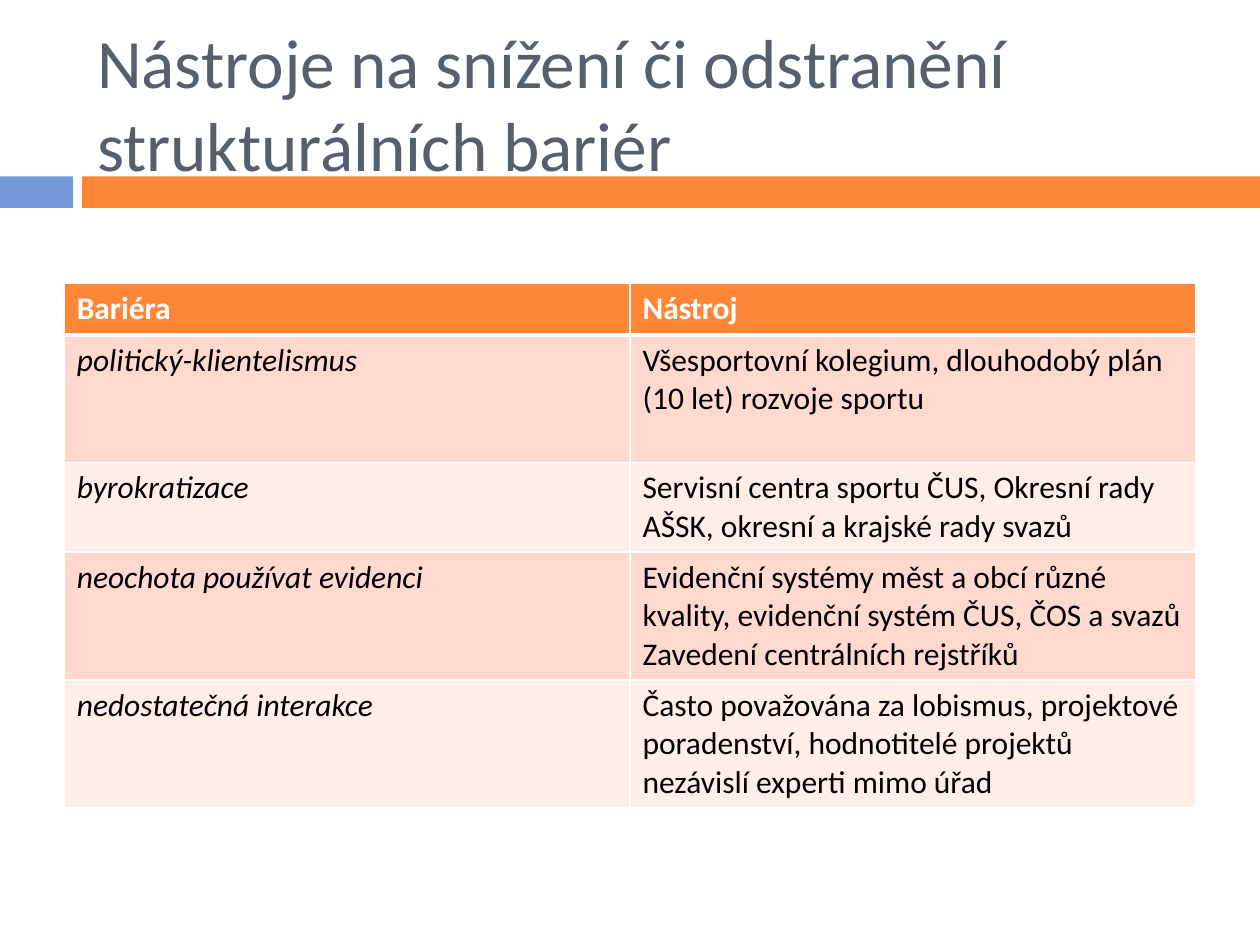
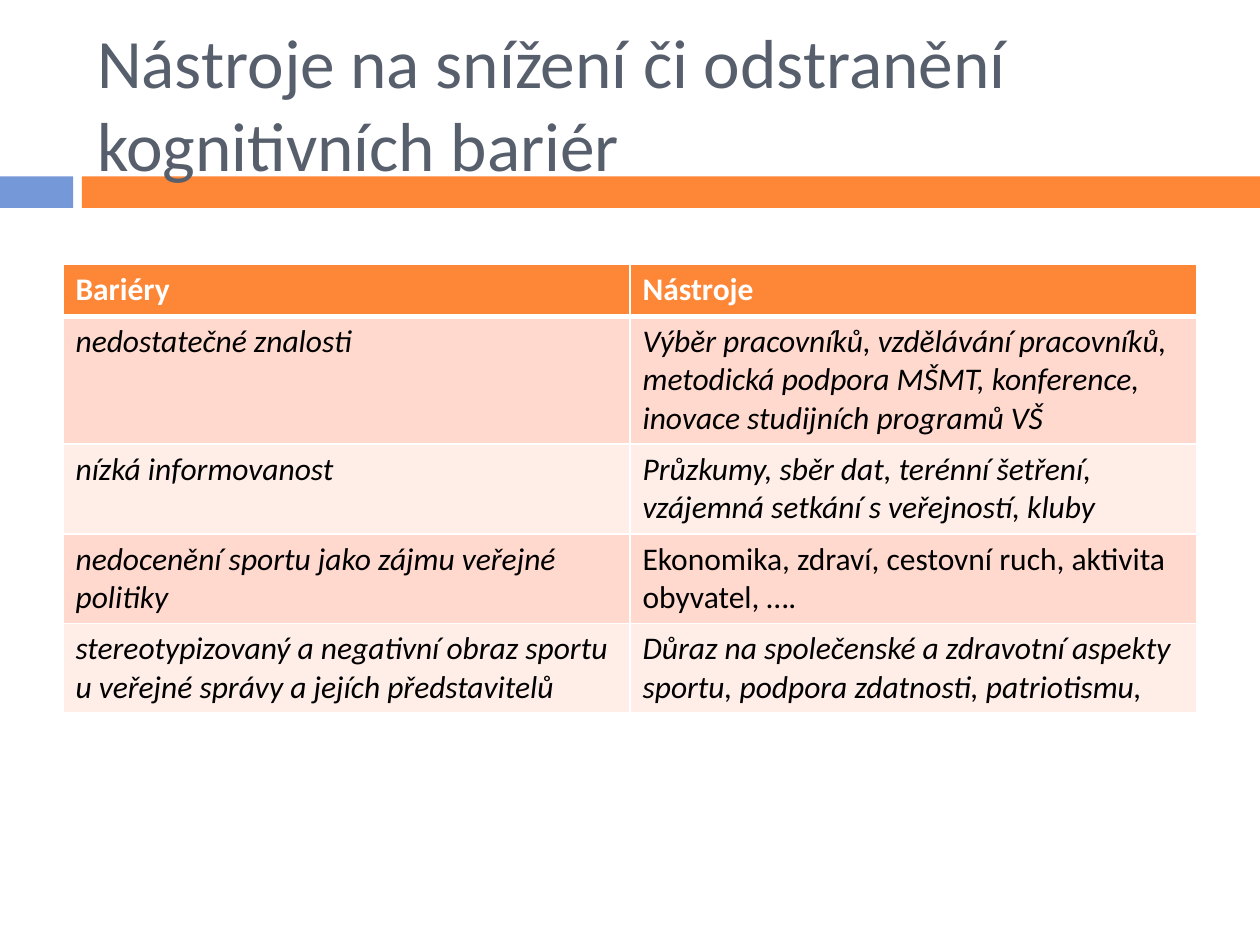
from lxml.etree import SubElement
from pptx import Presentation
from pptx.dml.color import RGBColor
from pptx.enum.shapes import MSO_SHAPE
from pptx.enum.text import MSO_ANCHOR, MSO_AUTO_SIZE, PP_ALIGN
from pptx.oxml.ns import qn
from pptx.util import Inches, Pt

ORANGE, BLUE, SLATE = "FE8637", "7598D9", "575F6D"
WHITE, BLACK = "FFFFFF", "000000"
ROW_TINTS = ["FFD9CE", "FFEDE8"]
FONT = "Calibri"


def paint(fill, hex_color):
    fill.solid()
    fill.fore_color.rgb = RGBColor.from_string(hex_color)


def write(frame, text, size=18, color=BLACK, bold=False, italic=False):
    frame.text = text
    for paragraph in frame.paragraphs:
        paragraph.alignment = PP_ALIGN.LEFT
        for run in paragraph.runs:
            run.font.name = FONT
            run.font.size = Pt(size)
            run.font.bold = bold
            run.font.italic = italic
            paint(run.font.fill, color)


# Content: header, then (barrier, tool, tool in italics, row height)
barrier_slides = [
    {
        "title": "Nástroje na snížení či odstranění strukturálních bariér",
        "left": 0.51, "top": 2.25, "column": 4.49,
        "header": ("Bariéra", "Nástroj"),
        "rows": [
            ("politický-klientelismus",
             "Všesportovní kolegium, dlouhodobý plán (10 let) rozvoje sportu", False, 1.01),
            ("byrokratizace",
             "Servisní centra sportu ČUS, Okresní rady AŠSK, okresní a krajské rady svazů",
             False, 0.71),
            ("neochota používat evidenci",
             "Evidenční systémy měst a obcí různé kvality, evidenční systém ČUS, ČOS a svazů\n"
             "Zavedení centrálních rejstříků", False, 1.01),
            ("nedostatečná interakce",
             "Často považována za lobismus, projektové poradenství, hodnotitelé projektů "
             "nezávislí experti mimo úřad", False, 1.01),
        ],
    },
    {
        "title": "Nástroje na snížení či odstranění kognitivních bariér",
        "left": 0.5, "top": 2.1, "column": 4.5,
        "header": ("Bariéry", "Nástroje"),
        "rows": [
            ("nedostatečné znalosti",
             "Výběr pracovníků, vzdělávání pracovníků, metodická podpora MŠMT, konference, "
             "inovace studijních programů VŠ", True, 1.01),
            ("nízká informovanost",
             "Průzkumy, sběr dat, terénní šetření, vzájemná setkání s veřejností, kluby",
             True, 0.71),
            ("nedocenění sportu jako zájmu veřejné politiky",
             "Ekonomika, zdraví, cestovní ruch, aktivita obyvatel, ….", False, 0.71),
            ("stereotypizovaný a negativní obraz sportu u veřejné správy a jejích představitelů",
             "Důraz na společenské a zdravotní aspekty sportu, podpora zdatnosti, patriotismu,",
             True, 0.71),
        ],
    },
]

prs = Presentation()
prs.slide_width, prs.slide_height = Inches(10), Inches(7.5)
title_only = prs.slide_layouts[5]
slides = [prs.slides.add_slide(title_only) for _ in barrier_slides]

# Bands, moved to the shared layout so that they lie behind every title
for left, width, color in [(0, 0.58, BLUE), (0.65, 9.35, ORANGE)]:
    band = slides[0].shapes.add_shape(
        MSO_SHAPE.RECTANGLE, Inches(left), Inches(1.4), Inches(width), Inches(0.25))
    band.shadow.inherit = False
    paint(band.fill, color)
    band.line.fill.background()
    title_only.shapes._spTree.append(band._element)

for slide, content in zip(slides, barrier_slides):
    # Title
    title = slide.shapes.title
    title.left, title.top = Inches(0.67), Inches(0.25)
    title.width, title.height = Inches(8.92), Inches(1.08)
    title.text_frame.word_wrap = True
    title.text_frame.auto_size = MSO_AUTO_SIZE.NONE
    title.text_frame.vertical_anchor = MSO_ANCHOR.MIDDLE
    title.text_frame.margin_bottom = 0
    write(title.text_frame, content["title"], size=39.6, color=SLATE)

    # Table of barriers and tools
    heights = [0.41] + [row[3] for row in content["rows"]]
    table = slide.shapes.add_table(
        len(heights), 2, Inches(content["left"]), Inches(content["top"]),
        Inches(2 * content["column"]), Inches(sum(heights))).table
    for row, height in zip(table.rows, heights):
        row.height = Inches(height)

    # Cell text
    for cell, heading in zip(table.rows[0].cells, content["header"]):
        write(cell.text_frame, heading, color=WHITE, bold=True)
    for r, (barrier, tool, tool_italic, _) in enumerate(content["rows"], start=1):
        write(table.cell(r, 0).text_frame, barrier, italic=True)
        write(table.cell(r, 1).text_frame, tool, italic=tool_italic)

    # White cell borders, thicker under the header, and row fills
    for r, row in enumerate(table.rows):
        for cell in row.cells:
            properties = cell._tc.get_or_add_tcPr()
            for side in ("lnL", "lnR", "lnT", "lnB"):
                under_header = (r, side) in [(0, "lnB"), (1, "lnT")]
                border = SubElement(properties, qn(f"a:{side}"),
                                    w=str(Pt(3 if under_header else 1)))
                SubElement(SubElement(border, qn("a:solidFill")), qn("a:srgbClr"), val=WHITE)
            paint(cell.fill, ROW_TINTS[(r - 1) % 2] if r else ORANGE)

prs.save("out.pptx")
